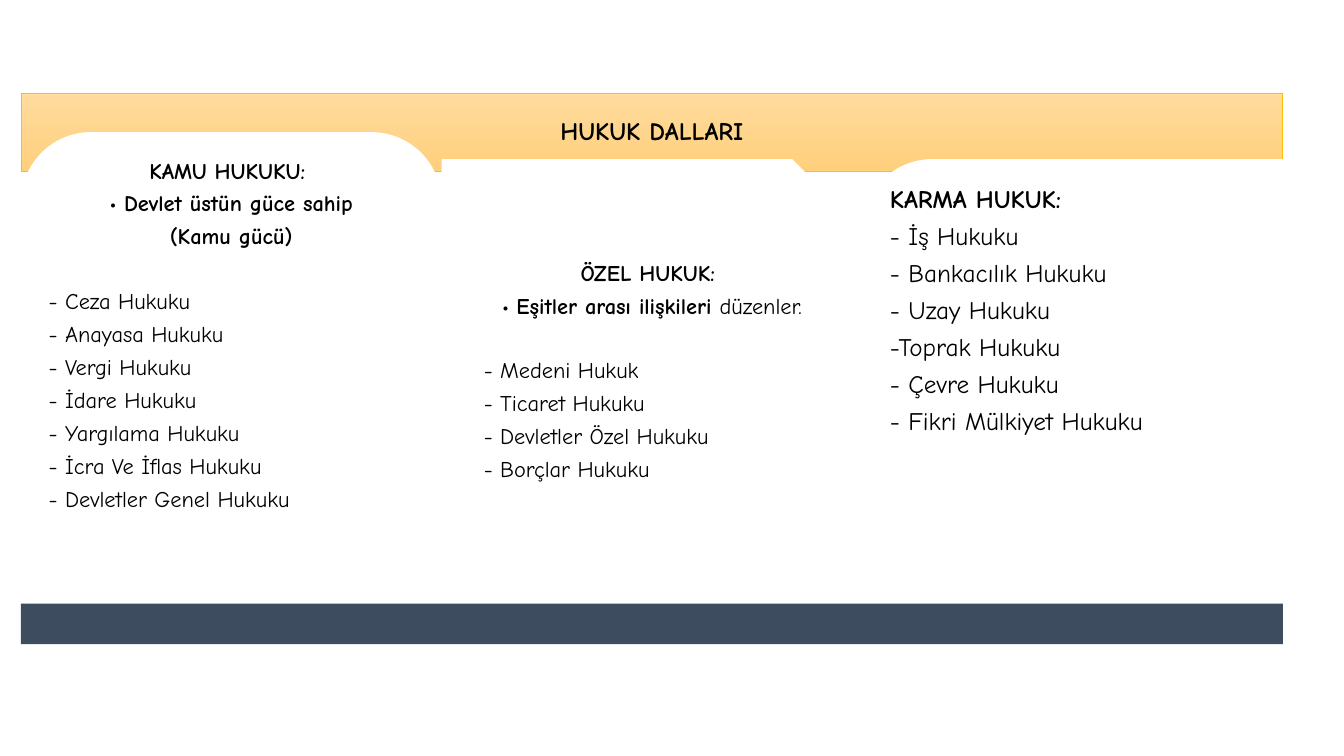
from dataclasses import dataclass

from pptx import Presentation
from pptx.dml.color import RGBColor
from pptx.enum.shapes import MSO_SHAPE
from pptx.enum.text import MSO_ANCHOR, MSO_AUTO_SIZE, PP_ALIGN
from pptx.shapes.autoshape import Shape
from pptx.slide import Slide
from pptx.text.text import TextFrame
from pptx.util import Cm, Pt

LEFT, CENTER = PP_ALIGN.LEFT, PP_ALIGN.CENTER
TOP, MIDDLE = MSO_ANCHOR.TOP, MSO_ANCHOR.MIDDLE
RECTANGLE = MSO_SHAPE.RECTANGLE
ROUNDED = MSO_SHAPE.ROUNDED_RECTANGLE
SNIPPED = MSO_SHAPE.SNIP_2_DIAG_RECTANGLE
DIAGONAL_ROUND = MSO_SHAPE.ROUND_2_DIAG_RECTANGLE
NO_AUTOFIT = MSO_AUTO_SIZE.NONE
TITLE_ONLY = 5


@dataclass(frozen=True)
class Theme:
    font: str = "Comic Neue"
    text: RGBColor = RGBColor(0x00, 0x00, 0x00)
    card: RGBColor = RGBColor(0xFF, 0xFF, 0xFF)
    footer: RGBColor = RGBColor(0x3E, 0x4C, 0x60)
    banner_top: RGBColor = RGBColor(0xFF, 0xDB, 0x9E)
    banner_bottom: RGBColor = RGBColor(0xFF, 0xD0, 0x7C)
    banner_line: RGBColor = RGBColor(0xFF, 0xC0, 0x00)
    large: int = 18
    regular: int = 16
    line_spacing: float = 0.9
    space_after: float = 0.39  # share of the type size
    blank_line: float = 1.43  # share of the type size


THEME = Theme()


@dataclass(frozen=True)
class Span:
    text: str
    bold: bool = False


@dataclass(frozen=True)
class Line:
    spans: tuple[Span, ...]
    align: PP_ALIGN = LEFT
    after_gap: bool = False


@dataclass(frozen=True)
class Branch:
    outline: MSO_SHAPE
    top: float
    height: float
    size: int
    anchor: MSO_ANCHOR
    lines: tuple[Line, ...]


def heading(*spans: Span, align: PP_ALIGN = CENTER) -> Line:
    return Line(spans, align)


def listing(*items: str, after_gap: bool = True) -> tuple[Line, ...]:
    return tuple(Line((Span(item),), after_gap=after_gap and i == 0)
                 for i, item in enumerate(items))


# Geometry in centimetres
MARGIN, TOTAL_WIDTH, INSET = 0.53, 31.8, 0.18
BANNER_TOP, BANNER_HEIGHT = 2.34, 1.98
FOOTER_TOP, FOOTER_HEIGHT = 15.21, 1.02

# Branches of law
BRANCHES = (
    Branch(ROUNDED, 3.33, 12.12, THEME.regular, TOP, (
        heading(Span("KAMU HUKUKU: ", True)),
        heading(Span("• "), Span("Devlet üstün güce sahip", True)),
        heading(Span("(Kamu gücü)", True)),
        *listing("- Ceza Hukuku", "- Anayasa Hukuku", "- Vergi Hukuku",
                 "- İdare Hukuku", "- Yargılama Hukuku",
                 "- İcra Ve İflas Hukuku", "- Devletler Genel Hukuku"),
    )),
    Branch(SNIPPED, 4.01, 10.74, THEME.regular, MIDDLE, (
        heading(Span("ÖZEL HUKUK: ", True)),
        heading(Span("• "), Span("Eşitler arası ilişkileri ", True),
                Span("düzenler.")),
        *listing("- Medeni Hukuk", "- Ticaret Hukuku",
                 "- Devletler Özel Hukuku", "- Borçlar Hukuku"),
    )),
    Branch(DIAGONAL_ROUND, 4.01, 10.74, THEME.large, TOP, (
        heading(Span("KARMA HUKUK:", True), align=LEFT),
        *listing("- İş Hukuku", "- Bankacılık Hukuku", "- Uzay Hukuku",
                 "-Toprak Hukuku", "- Çevre Hukuku",
                 "- Fikri Mülkiyet Hukuku", after_gap=False),
    )),
)


def write_lines(frame: TextFrame, lines: tuple[Line, ...], size: int,
                anchor: MSO_ANCHOR) -> None:
    frame.word_wrap = True
    frame.auto_size = NO_AUTOFIT
    frame.vertical_anchor = anchor
    frame.margin_left = frame.margin_right = Cm(INSET)
    frame.margin_top = frame.margin_bottom = Cm(INSET)
    for i, line in enumerate(lines):
        paragraph = frame.paragraphs[0] if i == 0 else frame.add_paragraph()
        paragraph.alignment = line.align
        paragraph.line_spacing = THEME.line_spacing
        paragraph.space_after = Pt(size * THEME.space_after)
        if line.after_gap:
            paragraph.space_before = Pt(size * THEME.blank_line)
        paragraph.font.name = THEME.font
        paragraph.font.size = Pt(size)
        paragraph.font.color.rgb = THEME.text
        uniform = len({span.bold for span in line.spans}) == 1
        if uniform:
            paragraph.font.bold = line.spans[0].bold
        for span in line.spans:
            run = paragraph.add_run()
            run.text = span.text
            if not uniform:
                run.font.bold = span.bold


def add_panel(slide: Slide, outline: MSO_SHAPE, left: float, top: float,
              width: float, height: float, color: RGBColor) -> Shape:
    panel = slide.shapes.add_shape(outline, Cm(left), Cm(top),
                                   Cm(width), Cm(height))
    panel.shadow.inherit = False
    panel.fill.solid()
    panel.fill.fore_color.rgb = color
    panel.line.fill.background()
    return panel


def format_banner(banner: Shape) -> None:
    banner.left, banner.top = Cm(MARGIN), Cm(BANNER_TOP)
    banner.width, banner.height = Cm(TOTAL_WIDTH), Cm(BANNER_HEIGHT)
    banner.fill.gradient()
    banner.fill.gradient_angle = 270
    stops = banner.fill.gradient_stops
    for stop, position, color in zip(
            stops, (0, 1), (THEME.banner_top, THEME.banner_bottom)):
        stop.position = position
        stop.color.rgb = color
    banner.line.color.rgb = THEME.banner_line
    banner.line.width = Pt(0.5)
    write_lines(banner.text_frame, (heading(Span("HUKUK DALLARI", True)),),
                THEME.large, MIDDLE)


def main() -> None:
    deck = Presentation()
    deck.slide_width, deck.slide_height = Cm(33.87), Cm(19.05)
    slide = deck.slides.add_slide(deck.slide_layouts[TITLE_ONLY])

    # Title banner
    format_banner(slide.shapes.title)

    # One card per branch
    card_width = TOTAL_WIDTH / len(BRANCHES)
    for i, branch in enumerate(BRANCHES):
        card = add_panel(slide, branch.outline, MARGIN + i * card_width,
                         branch.top, card_width, branch.height, THEME.card)
        write_lines(card.text_frame, branch.lines, branch.size, branch.anchor)

    # Footer bar
    add_panel(slide, RECTANGLE, MARGIN, FOOTER_TOP, TOTAL_WIDTH,
              FOOTER_HEIGHT, THEME.footer)

    deck.save("out.pptx")


if __name__ == "__main__":
    main()
